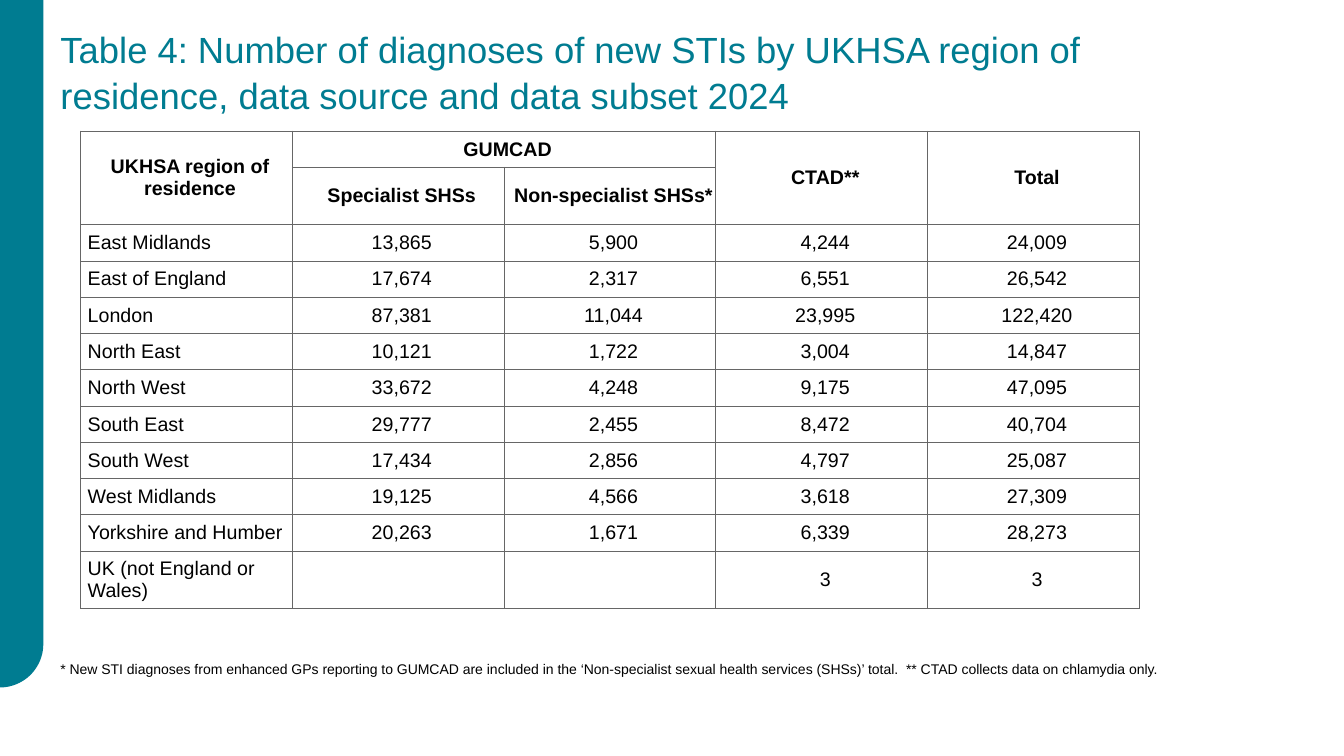
import math
from dataclasses import dataclass

from lxml import etree
from pptx import Presentation
from pptx.dml.color import RGBColor
from pptx.enum.text import MSO_ANCHOR, MSO_AUTO_SIZE, PP_ALIGN
from pptx.oxml.ns import qn
from pptx.util import Inches, Pt

LEFT, CENTER = PP_ALIGN.LEFT, PP_ALIGN.CENTER
TOP, MIDDLE = MSO_ANCHOR.TOP, MSO_ANCHOR.MIDDLE
NO_AUTOFIT = MSO_AUTO_SIZE.NONE
FONT, TEAL, BLACK, GREY = "Arial", "007C91", "000000", "666666"
BAR_WIDTH, BAR_HEIGHT = 0.43, 6.82
COLUMN_WIDTH, ROW_HEIGHT, TALL_ROW_HEIGHT = 2.1, 0.36, 0.57
CELL_PADDING, CELL_INDENT = 0.06, 0.07
HEADER_ROWS = 2


@dataclass
class TextBlock:
    text: str
    left: float
    top: float
    width: float
    height: float
    size: float
    color: str
    line_spacing: float = 1.0


@dataclass
class Merge:
    first_row: int
    first_col: int
    last_row: int
    last_col: int


TITLE = TextBlock(
    "Table 4: Number of diagnoses of new STIs by UKHSA region of residence, "
    "data source and data subset 2024", 0.5, 0.2, 12, 0.46, 26, TEAL, 1.05)
FOOTNOTE = TextBlock(
    "* New STI diagnoses from enhanced GPs reporting to GUMCAD are included in the "
    "‘Non-specialist sexual health services (SHSs)’ total.  "
    "** CTAD collects data on chlamydia only.", 0.5, 6.5, 12, 0.3, 10, BLACK)

ROWS = [
    ("UKHSA region of residence", "GUMCAD", "", "CTAD**", "Total"),
    ("", "Specialist SHSs", "Non-specialist SHSs*", "", ""),
    ("East Midlands", "13,865", "5,900", "4,244", "24,009"),
    ("East of England", "17,674", "2,317", "6,551", "26,542"),
    ("London", "87,381", "11,044", "23,995", "122,420"),
    ("North East", "10,121", "1,722", "3,004", "14,847"),
    ("North West", "33,672", "4,248", "9,175", "47,095"),
    ("South East", "29,777", "2,455", "8,472", "40,704"),
    ("South West", "17,434", "2,856", "4,797", "25,087"),
    ("West Midlands", "19,125", "4,566", "3,618", "27,309"),
    ("Yorkshire and Humber", "20,263", "1,671", "6,339", "28,273"),
    ("UK (not England or Wales)", "", "", "3", "3"),
]
TALL_ROWS = (1, len(ROWS) - 1)
MERGES = [Merge(0, 0, 1, 0), Merge(0, 1, 0, 2), Merge(0, 3, 1, 3), Merge(0, 4, 1, 4)]


def rgb(color: str) -> RGBColor:
    return RGBColor.from_string(color)


def add_run(p, text: str, size: float, color: str, bold: bool = False) -> None:
    r = p.add_run()
    r.text = text
    r.font.name = FONT
    r.font.size = Pt(size)
    r.font.bold = bold
    r.font.color.rgb = rgb(color)


def fill_text(sp, block: TextBlock) -> None:
    sp.left, sp.top = Inches(block.left), Inches(block.top)
    sp.width, sp.height = Inches(block.width), Inches(block.height)
    tf = sp.text_frame
    tf.word_wrap = True
    tf.auto_size = NO_AUTOFIT
    tf.vertical_anchor = TOP
    p = tf.paragraphs[0]
    p.alignment = LEFT
    p.line_spacing = block.line_spacing
    p.space_before = Pt(0)
    add_run(p, block.text, block.size, block.color)


def add_side_bar(s) -> None:
    angles = [math.radians(a) for a in range(0, 91, 3)]
    arc_top = BAR_HEIGHT - BAR_WIDTH
    arc = [(Inches(BAR_WIDTH * math.cos(a)), Inches(arc_top + BAR_WIDTH * math.sin(a)))
           for a in angles]
    builder = s.shapes.build_freeform(0, 0)
    builder.add_line_segments([(Inches(BAR_WIDTH), 0), *arc], close=True)
    sp = builder.convert_to_shape()
    sp.shadow.inherit = False
    sp.fill.solid()
    sp.fill.fore_color.rgb = rgb(TEAL)
    sp.line.fill.background()


def set_borders(cell) -> None:
    tc_pr = cell._tc.get_or_add_tcPr()
    for position, side in enumerate(("a:lnL", "a:lnR", "a:lnT", "a:lnB")):
        line = etree.Element(qn(side), w=str(Pt(0.75)))
        fill = etree.SubElement(line, qn("a:solidFill"))
        etree.SubElement(fill, qn("a:srgbClr"), val=GREY)
        tc_pr.insert(position, line)


def format_cell(cell, text: str, header: bool, align: PP_ALIGN) -> None:
    cell.fill.background()
    set_borders(cell)
    cell.vertical_anchor = MIDDLE
    cell.margin_left = cell.margin_right = 0
    cell.margin_top = cell.margin_bottom = Inches(CELL_PADDING)
    p = cell.text_frame.paragraphs[0]
    p.alignment = align
    p.font.size = Pt(14)
    p._p.get_or_add_pPr().set("marL", str(Inches(CELL_INDENT)))
    if text:
        add_run(p, text, 14, BLACK, header)


def add_diagnoses_table(s) -> None:
    columns = len(ROWS[0])
    table = s.shapes.add_table(
        len(ROWS), columns, Inches(0.8), Inches(1.3),
        Inches(COLUMN_WIDTH * columns), Inches(ROW_HEIGHT * len(ROWS))).table
    table.first_row = table.horz_banding = False
    for column in table.columns:
        column.width = Inches(COLUMN_WIDTH)
    for i, values in enumerate(ROWS):
        table.rows[i].height = Inches(TALL_ROW_HEIGHT if i in TALL_ROWS else ROW_HEIGHT)
        header = i < HEADER_ROWS
        for j, text in enumerate(values):
            align = CENTER if header or j else LEFT
            format_cell(table.cell(i, j), text, header, align)
    for m in MERGES:
        table.cell(m.first_row, m.first_col).merge(table.cell(m.last_row, m.last_col))


def main() -> None:
    prs = Presentation()
    prs.slide_width, prs.slide_height = Inches(13.33), Inches(7.5)
    s = prs.slides.add_slide(prs.slide_layouts[5])
    add_side_bar(s)
    fill_text(s.shapes.title, TITLE)
    add_diagnoses_table(s)
    fill_text(s.shapes.add_textbox(0, 0, 0, 0), FOOTNOTE)
    prs.save("out.pptx")


if __name__ == "__main__":
    main()
